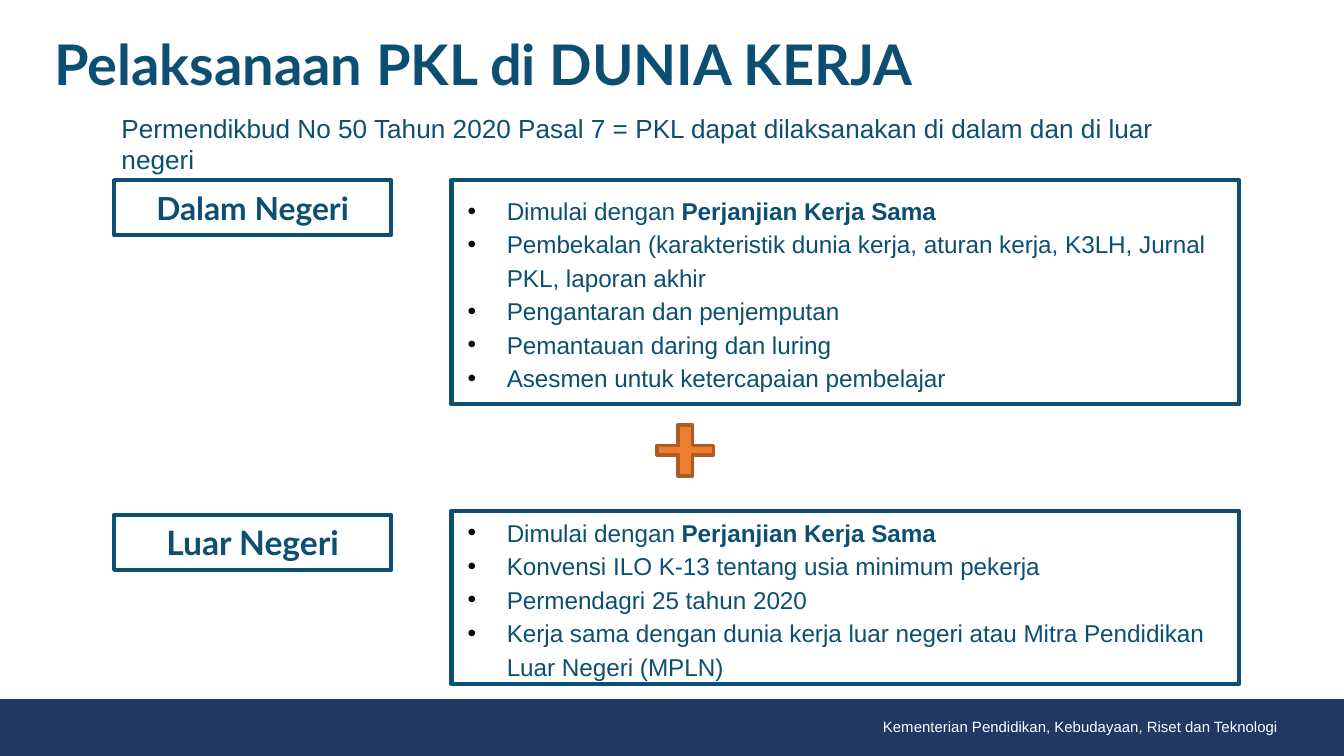
from lxml import etree
from pptx import Presentation
from pptx.dml.color import RGBColor
from pptx.enum.shapes import MSO_SHAPE
from pptx.enum.text import MSO_ANCHOR, PP_ALIGN
from pptx.oxml.ns import qn
from pptx.util import Pt

RECTANGLE, PLUS = MSO_SHAPE.RECTANGLE, MSO_SHAPE.CROSS
TOP, MIDDLE = MSO_ANCHOR.TOP, MSO_ANCHOR.MIDDLE
LEFT, CENTER, RIGHT = PP_ALIGN.LEFT, PP_ALIGN.CENTER, PP_ALIGN.RIGHT

COLORS = {
    "teal": "0C4F72",
    "navy": "1F3864",
    "orange": "ED7D31",
    "brown": "AF5C24",
    "white": "FFFFFF",
    "black": "000000",
}
INSET = 7.2
LABEL_LEFT, LABEL_WIDTH, LABEL_HEIGHT = 61.2, 148.3, 29.5
STEPS_LEFT, STEPS_WIDTH = 241.9, 421.9
AGREEMENT = [("Dimulai dengan ", False), ("Perjanjian Kerja Sama", True)]

SECTIONS = [
    {
        "label": "Dalam Negeri",
        "label_top": 96.5,
        "label_size": 17,
        "steps_top": 96.5,
        "steps_height": 120.2,
        "steps": [
            "Pembekalan (karakteristik dunia kerja, aturan kerja, K3LH, Jurnal PKL, laporan akhir",
            "Pengantaran dan penjemputan",
            "Pemantauan daring dan luring",
            "Asesmen untuk ketercapaian pembelajar",
        ],
    },
    {
        "label": "Luar Negeri",
        "label_top": 275.8,
        "label_size": 18,
        "steps_top": 273.6,
        "steps_height": 92.9,
        "steps": [
            "Konvensi ILO K-13 tentang usia minimum pekerja",
            "Permendagri 25 tahun 2020",
            "Kerja sama dengan dunia kerja luar negeri atau Mitra Pendidikan Luar Negeri (MPLN)",
        ],
    },
]


def rgb(name):
    return RGBColor.from_string(COLORS[name])


def add_panel(slide, kind, box, line, weight, fill=None):
    panel = slide.shapes.add_shape(kind, *map(Pt, box))
    panel.shadow.inherit = False
    if fill:
        panel.fill.solid()
        panel.fill.fore_color.rgb = rgb(fill)
    else:
        panel.fill.background()
    panel.line.color.rgb = rgb(line)
    panel.line.width = Pt(weight)
    return panel


def prepare_frame(holder, anchor, left=INSET, sides=INSET, ends=INSET):
    frame = holder.text_frame
    frame.word_wrap = True
    frame.vertical_anchor = anchor
    frame.margin_left, frame.margin_right = Pt(left), Pt(sides)
    frame.margin_top = frame.margin_bottom = Pt(ends)
    return frame


def add_run(paragraph, text, size, font="Arial", color="teal", bold=False):
    run = paragraph.add_run()
    run.text = text
    run.font.size = Pt(size)
    run.font.name = font
    run.font.bold = bold
    run.font.color.rgb = rgb(color)


def add_line(frame, align, text, size, **style):
    paragraph = frame.paragraphs[0]
    paragraph.alignment = align
    add_run(paragraph, text, size, **style)


def set_bullet(paragraph):
    properties = paragraph._p.get_or_add_pPr()
    properties.set("marL", str(Pt(22.5)))
    properties.set("indent", str(Pt(-21)))
    tint = etree.SubElement(properties, qn("a:buClr"))
    etree.SubElement(tint, qn("a:srgbClr"), val=COLORS["black"])
    etree.SubElement(properties, qn("a:buFont"), typeface="Arial")
    etree.SubElement(properties, qn("a:buChar"), char="•")


def add_steps(frame, steps):
    for index, step in enumerate(steps):
        paragraph = frame.add_paragraph() if index else frame.paragraphs[0]
        set_bullet(paragraph)
        paragraph.alignment = LEFT
        paragraph.line_spacing = 1.15
        for text, bold in step:
            add_run(paragraph, text, 13, bold=bold)


def add_section(slide, section):
    label_box = (LABEL_LEFT, section["label_top"], LABEL_WIDTH, LABEL_HEIGHT)
    label = add_panel(slide, RECTANGLE, label_box, "teal", 2.25)
    add_line(prepare_frame(label, MIDDLE), CENTER, section["label"],
             section["label_size"], font="Lato", bold=True)

    steps_box = (STEPS_LEFT, section["steps_top"], STEPS_WIDTH, section["steps_height"])
    procedure = add_panel(slide, RECTANGLE, steps_box, "teal", 2.25)
    steps = [AGREEMENT] + [[(text, False)] for text in section["steps"]]
    add_steps(prepare_frame(procedure, MIDDLE), steps)


def add_footer(slide):
    add_panel(slide, RECTANGLE, (0, 375.2, 720, 29.8), "navy", 1, fill="navy")
    ministry = slide.shapes.add_textbox(Pt(408.2), Pt(382.3), Pt(281.5), Pt(14.4))
    add_line(prepare_frame(ministry, MIDDLE, 5, 5, 2.9), RIGHT,
             "Kementerian Pendidikan, Kebudayaan, Riset dan Teknologi", 8, color="white")


def add_heading(slide):
    title = slide.shapes.add_textbox(Pt(-44.6), Pt(8.6), Pt(607.7), Pt(45.4))
    add_line(prepare_frame(title, TOP), CENTER, "Pelaksanaan PKL di DUNIA KERJA",
             30, font="Lato", bold=True)
    regulation = slide.shapes.add_textbox(Pt(56.2), Pt(57.6), Pt(607.7), Pt(38.9))
    add_line(prepare_frame(regulation, MIDDLE, left=8.9), LEFT,
             "Permendikbud No 50 Tahun 2020 Pasal 7 = PKL dapat dilaksanakan "
             "di dalam dan di luar negeri", 14)


def main():
    deck = Presentation()
    deck.slide_width, deck.slide_height = Pt(720), Pt(405)
    slide = deck.slides.add_slide(deck.slide_layouts[6])
    add_footer(slide)
    add_heading(slide)
    for section in SECTIONS:
        add_section(slide, section)
    plus = add_panel(slide, PLUS, (352.1, 227.5, 30.2, 27.4), "brown", 2, fill="orange")
    plus.adjustments[0] = 0.41
    deck.save("out.pptx")


if __name__ == "__main__":
    main()
